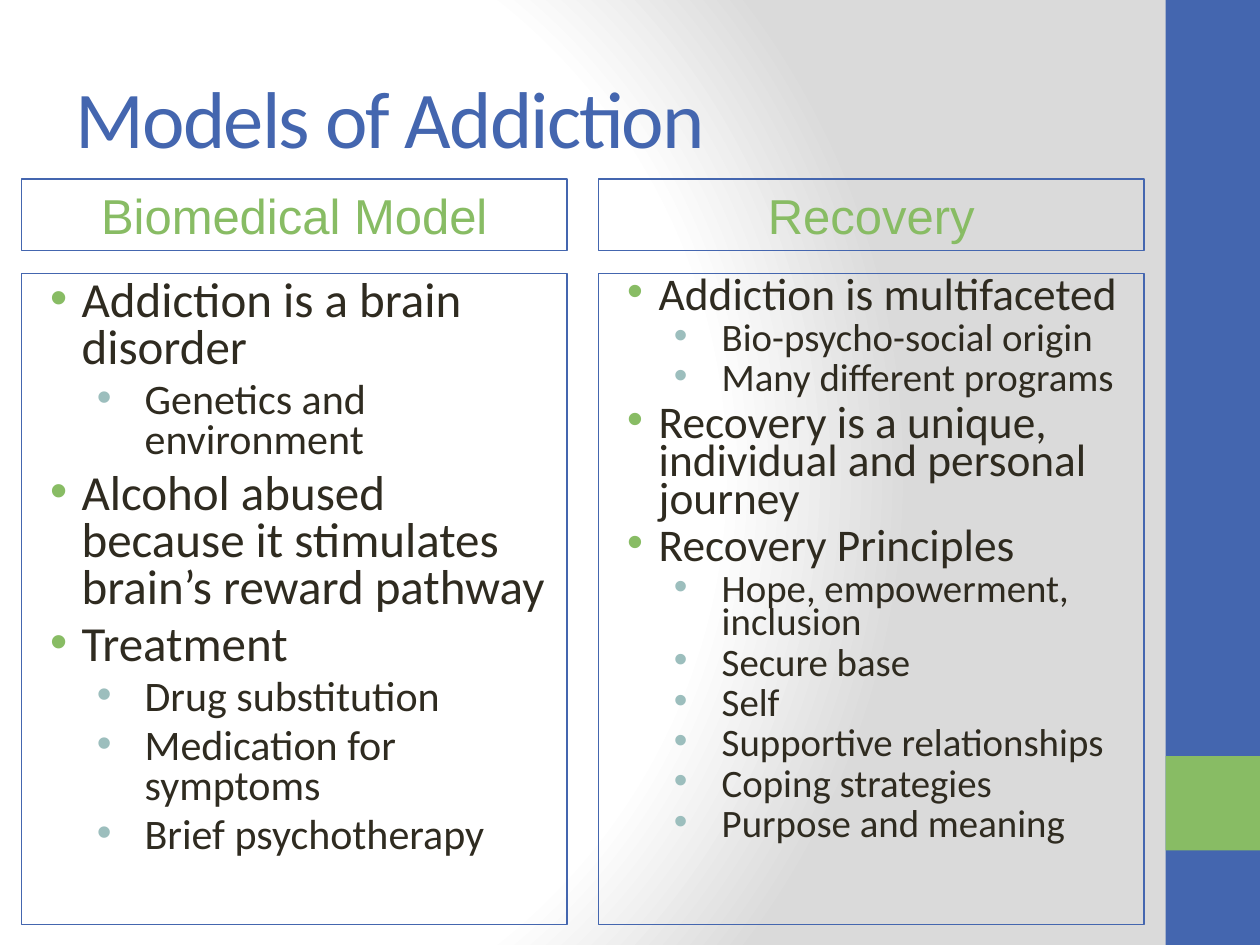
from pptx import Presentation
from pptx.dml.color import RGBColor
from pptx.enum.shapes import MSO_SHAPE as SHAPE
from pptx.enum.text import MSO_ANCHOR as ANCHOR, MSO_AUTO_SIZE as AUTO_SIZE, PP_ALIGN as ALIGN
from pptx.oxml import parse_xml
from pptx.oxml.ns import nsdecls
from pptx.util import Inches, Pt

THEME = {
    "blue": "4466AF", "green": "88BC64", "teal": "9CBEBD", "ink": "2F2B20",
    "white": "FFFFFF", "grey": "DADADA",
    "body_font": "Calibri", "label_font": "Arial",
    "title_size": 46, "label_size": 28,
}

# Each level: left margin, first-line indent, bullet colour
LEVELS = [(0.38, -0.25, THEME["green"]), (0.88, -0.38, THEME["teal"])]

COLUMNS = [
    {
        "label": "Biomedical Model", "left": 0.17, "sizes": (28, 24), "spacing": 0.8,
        "items": [
            (0, "Addiction is a brain disorder"),
            (1, "Genetics and environment"),
            (0, "Alcohol abused because it stimulates brain’s reward pathway"),
            (0, "Treatment"),
            (1, "Drug substitution"),
            (1, "Medication for symptoms"),
            (1, "Brief psychotherapy"),
        ],
    },
    {
        "label": "Recovery", "left": 4.75, "sizes": (25.9, 22.2), "spacing": 0.7,
        "items": [
            (0, "Addiction is multifaceted"),
            (1, "Bio-psycho-social origin"),
            (1, "Many different programs"),
            (0, "Recovery is a unique, individual and personal journey"),
            (0, "Recovery Principles"),
            (1, "Hope, empowerment, inclusion"),
            (1, "Secure base"),
            (1, "Self"),
            (1, "Supportive relationships"),
            (1, "Coping strategies"),
            (1, "Purpose and meaning"),
        ],
    },
]


def add_box(left, top, width, height, fill=None, line=None):
    box = page.shapes.add_shape(
        SHAPE.RECTANGLE, Inches(left), Inches(top), Inches(width), Inches(height))
    box.shadow.inherit = False
    if fill:
        box.fill.solid()
        box.fill.fore_color.rgb = RGBColor.from_string(fill)
    else:
        box.fill.background()
    if line:
        box.line.color.rgb = RGBColor.from_string(line)
        box.line.width = Pt(0.75)
    else:
        box.line.fill.background()
    box.text_frame.word_wrap = True
    box.text_frame.vertical_anchor = ANCHOR.TOP
    return box


def add_span(para, text, font, size, color):
    span = para.add_run()
    span.text = text
    for name, value in {"name": font, "size": Pt(size), "bold": False}.items():
        setattr(span.font, name, value)
    span.font.color.rgb = RGBColor.from_string(color)
    return span


deck = Presentation()
deck.slide_width, deck.slide_height = Inches(10), Inches(7.5)
page = deck.slides.add_slide(deck.slide_layouts[5])

# Background: white fading to grey
stops = [(0, THEME["white"]), (75, THEME["white"]), (100, THEME["grey"])]
stop_xml = "".join(
    f'<a:gs pos="{pos * 1000}"><a:srgbClr val="{color}"/></a:gs>' for pos, color in stops)
page.element.cSld.insert(0, parse_xml(
    f'<p:bg {nsdecls("p", "a")}><p:bgPr><a:gradFill rotWithShape="1">'
    f'<a:gsLst>{stop_xml}</a:gsLst><a:path path="circle">'
    '<a:fillToRect l="20000" t="50000" r="100000" b="50000"/></a:path>'
    '</a:gradFill><a:effectLst/></p:bgPr></p:bg>'))

# Side band
add_box(9.25, 0, 0.75, 7.5, fill=THEME["blue"])
add_box(9.25, 6, 0.75, 0.75, fill=THEME["green"])

# Title
title = page.shapes.title
place = {"left": 0.5, "top": 0.3, "width": 8.33, "height": 1.25}
for name, value in place.items():
    setattr(title, name, Inches(value))
frame = title.text_frame
frame.auto_size = AUTO_SIZE.NONE
frame.vertical_anchor = ANCHOR.MIDDLE
para = frame.paragraphs[0]
para.alignment = ALIGN.LEFT
span = add_span(para, "Models of Addiction", THEME["body_font"],
                THEME["title_size"], THEME["blue"])
span.font._element.set("spc", "-100")

# Columns: a label above a bulleted list
for column in COLUMNS:
    label = add_box(column["left"], 1.42, 4.33, 0.57, line=THEME["blue"])
    para = label.text_frame.paragraphs[0]
    para.alignment = ALIGN.CENTER
    add_span(para, column["label"], THEME["label_font"],
             THEME["label_size"], THEME["green"])

    body = add_box(column["left"], 2.17, 4.33, 5.17, line=THEME["blue"])
    frame = body.text_frame
    for index, (level, text) in enumerate(column["items"]):
        para = frame.add_paragraph() if index else frame.paragraphs[0]
        size = column["sizes"][level]
        settings = {"level": level, "alignment": ALIGN.LEFT,
                    "line_spacing": column["spacing"], "space_before": Pt(0.2 * size)}
        for name, value in settings.items():
            setattr(para, name, value)
        margin, indent, bullet_color = LEVELS[level]
        props = para._p.get_or_add_pPr()
        props.set("marL", str(Inches(margin)))
        props.set("indent", str(Inches(indent)))
        for bullet in (
            f'<a:buClr {nsdecls("a")}><a:srgbClr val="{bullet_color}"/></a:buClr>',
            f'<a:buFont {nsdecls("a")} typeface="Arial"/>',
            f'<a:buChar {nsdecls("a")} char="•"/>',
        ):
            props.append(parse_xml(bullet))
        add_span(para, text, THEME["body_font"], size, THEME["ink"])

deck.save("out.pptx")
